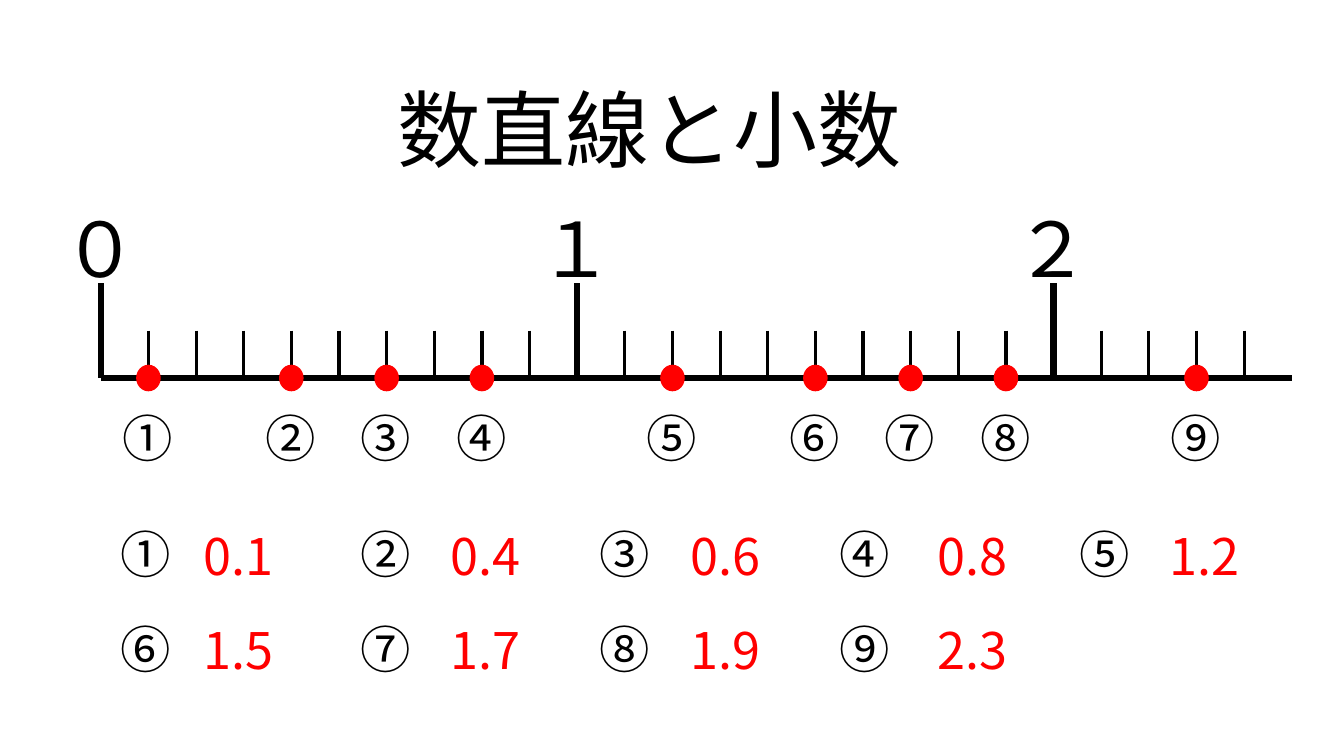
from lxml import etree
from pptx import Presentation
from pptx.dml.color import RGBColor
from pptx.enum.shapes import MSO_CONNECTOR, MSO_SHAPE
from pptx.enum.text import MSO_AUTO_SIZE
from pptx.oxml.ns import qn
from pptx.util import Inches, Pt

STRAIGHT = MSO_CONNECTOR.STRAIGHT
OVAL = MSO_SHAPE.OVAL
FIT_SHAPE = MSO_AUTO_SIZE.SHAPE_TO_FIT_TEXT

FONT = "Noto Sans CJK JP"
BLACK = "000000"
RED = "FF0000"

ORIGIN = 1
COLUMN = 0.4725
ROW = 7.5 / 16
AXIS_ROW = 8
AXIS_COLUMNS = 25

MARKS = [("①", 0.1), ("②", 0.4), ("③", 0.6), ("④", 0.8), ("⑤", 1.2),
         ("⑥", 1.5), ("⑦", 1.7), ("⑧", 1.9), ("⑨", 2.3)]
ANSWERS_PER_ROW = 5
ANSWER_COLUMNS = (1.95, 7.13, 12.17, 17.35, 22.22)


def color(hex_string):
    return RGBColor.from_string(hex_string)


def across(column):
    return Inches(ORIGIN + column * COLUMN)


def down(row):
    return Inches(row * ROW)


class NumberLineSlide:
    def __init__(self, presentation):
        self.slide = presentation.slides.add_slide(presentation.slide_layouts[6])

    def text(self, wording, column, row, columns, rows, size, ink=BLACK, wrap=True):
        box = self.slide.shapes.add_textbox(
            across(column), down(row), Inches(columns * COLUMN), down(rows))
        frame = box.text_frame
        frame.word_wrap = wrap
        frame.auto_size = FIT_SHAPE
        run = frame.paragraphs[0].add_run()
        run.text = wording
        run.font.size = Pt(size)
        run.font.name = FONT
        run.font.color.rgb = color(ink)
        properties = run.font._element
        etree.SubElement(properties, qn("a:ea")).set("typeface", FONT)

    def symbol(self, wording, column, row):
        self.text(wording, column, row, 1.5, 1.5, 36, wrap=False)

    def line(self, start, end, width):
        connector = self.slide.shapes.add_connector(
            STRAIGHT, across(start[0]), down(start[1]), across(end[0]), down(end[1]))
        connector.line.color.rgb = color(BLACK)
        connector.line.width = Pt(width)
        etree.SubElement(connector._element.spPr, qn("a:effectLst"))

    def dot(self, column):
        width, height = Inches(0.23), Inches(0.25)
        shape = self.slide.shapes.add_shape(
            OVAL, across(column) - width // 2, down(AXIS_ROW) - height // 2, width, height)
        shape.shadow.inherit = False
        shape.fill.solid()
        shape.fill.fore_color.rgb = color(RED)
        shape.line.color.rgb = color(RED)
        shape.line.width = Pt(1)


def main():
    presentation = Presentation()
    presentation.slide_width = Inches(13.33)
    presentation.slide_height = Inches(7.5)
    page = NumberLineSlide(presentation)

    page.text("数直線と小数", 6.01, 1.54, 11.03, 2.37, 60)

    page.line((0, AXIS_ROW), (AXIS_COLUMNS, AXIS_ROW), 4.5)
    for tick in range(AXIS_COLUMNS):
        is_whole = tick % 10 == 0
        top = AXIS_ROW - (2 if is_whole else 1)
        page.line((tick, top), (tick, AXIS_ROW), 4.5 if is_whole else 2.25)

    for whole, digit in enumerate("０１２"):
        page.text(digit, whole * 10 - 1.02, 4.16, 2.04, 2.15, 54)

    for number, value in MARKS:
        page.dot(value * 10)
        page.symbol(number, value * 10 - 0.75, 8.51)

    for index, (number, value) in enumerate(MARKS):
        answer_row, place = divmod(index, ANSWERS_PER_ROW)
        row = 11 + 2 * answer_row
        page.symbol(number, 0.21 + 5.03 * place, row - 0.03)
        page.text(str(value), ANSWER_COLUMNS[place], row, 2.77, 1.5, 36, RED)

    presentation.save("out.pptx")


if __name__ == "__main__":
    main()
